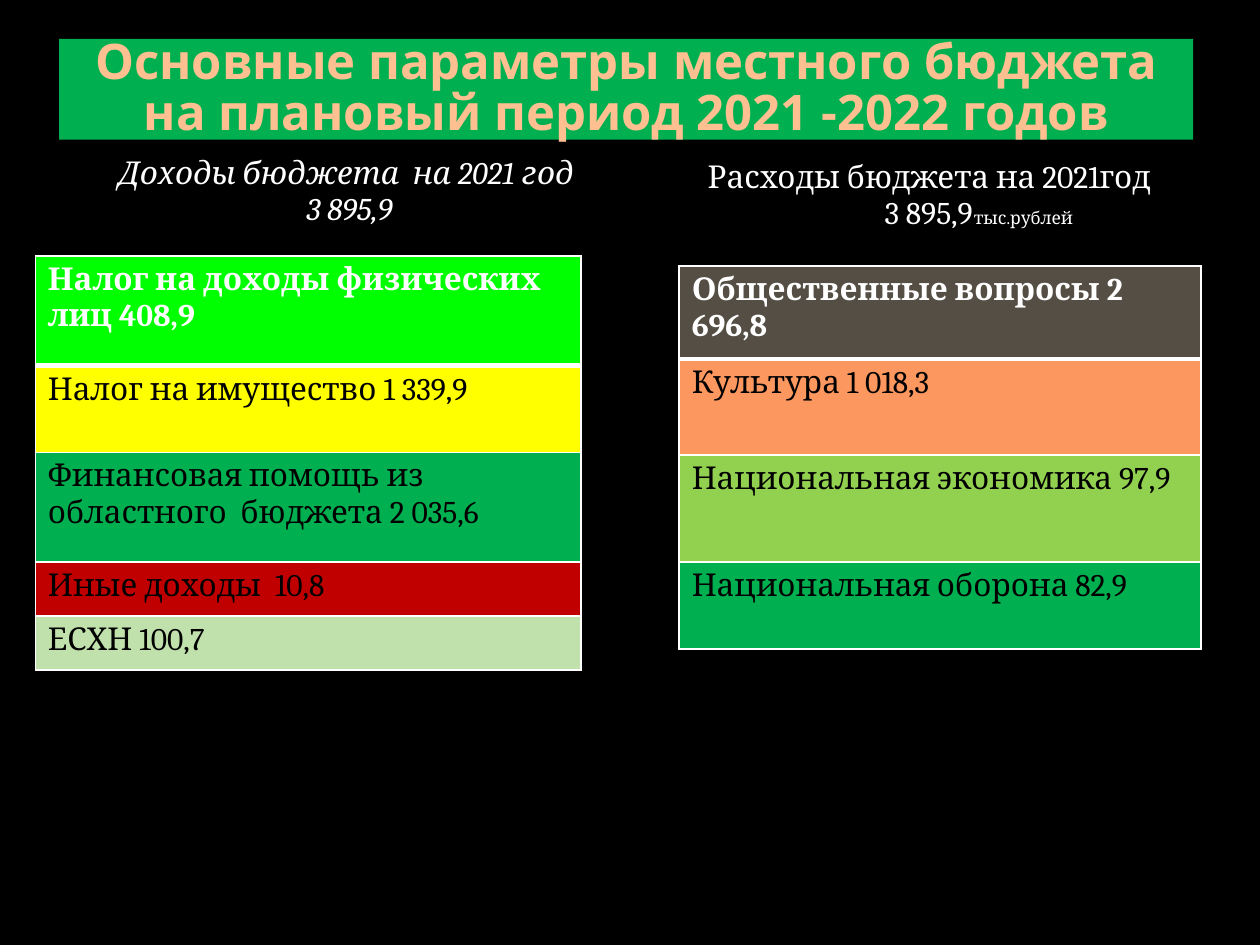
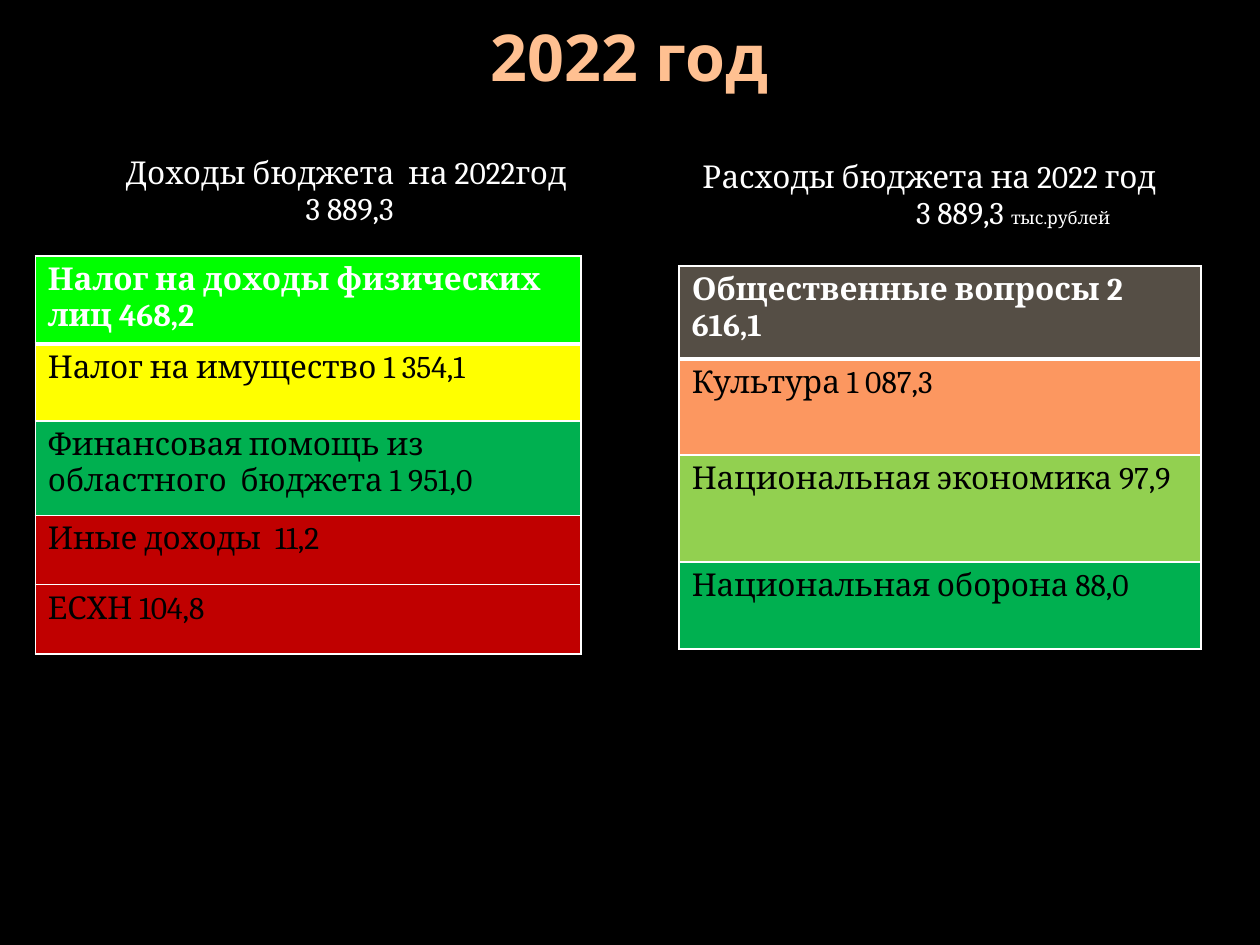
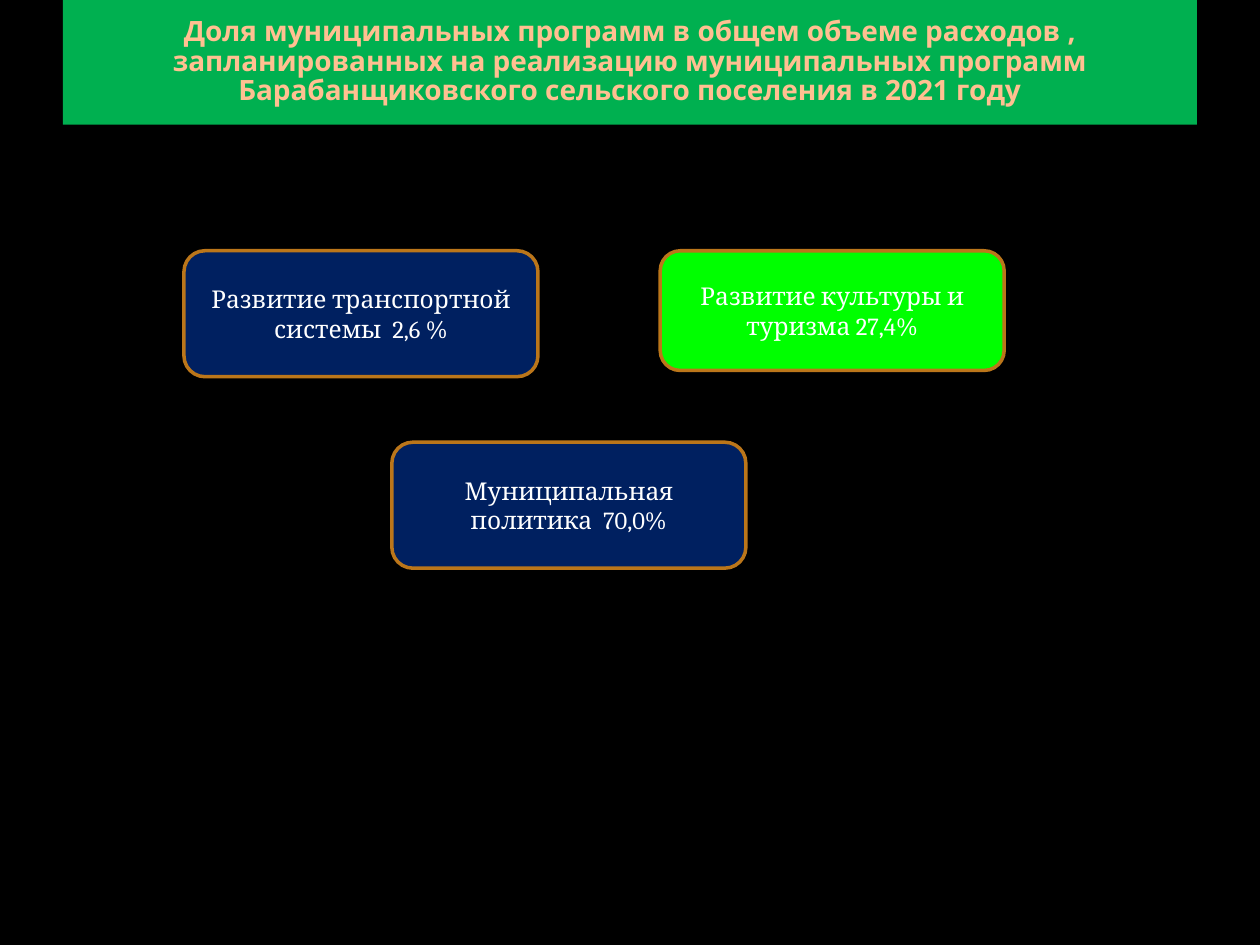
from dataclasses import dataclass

from lxml import etree
from pptx import Presentation
from pptx.dml.color import RGBColor
from pptx.enum.shapes import MSO_SHAPE
from pptx.enum.text import MSO_ANCHOR, PP_ALIGN
from pptx.oxml.ns import qn
from pptx.util import Inches, Pt

RECTANGLE, ROUNDED = MSO_SHAPE.RECTANGLE, MSO_SHAPE.ROUNDED_RECTANGLE
MIDDLE = MSO_ANCHOR.MIDDLE
LEFT, CENTER = PP_ALIGN.LEFT, PP_ALIGN.CENTER
NO_TABLE_STYLE = "{2D5ABB26-0587-4C30-8999-92F81FD0307C}"

# The slide is a grid of 100 columns and 75 rows
SLIDE_WIDTH, SLIDE_HEIGHT = Inches(10), Inches(7.5)
COLUMNS, ROWS = 100, 75


@dataclass(frozen=True)
class Theme:
    background: str = "000000"
    light: str = "FFFFFF"
    dark: str = "000000"
    title: str = "FFC091"
    green: str = "00B050"
    lime: str = "00FF00"
    yellow: str = "FFFF00"
    red: str = "C00000"
    pale_green: str = "C0E1AB"
    brown: str = "554E45"
    orange: str = "FC9760"
    grass: str = "92D050"
    navy: str = "002060"
    outline: str = "BB761A"
    title_font: str = "Noto Sans"
    body_font: str = "Cambria"
    body_size: float = 18
    unit_size: float = 10
    program_size: float = 14
    title_spacing: float = 0.87
    thin: float = 1
    thick: float = 3


THEME = Theme()


@dataclass(frozen=True)
class Box:
    """A place in grid columns and rows."""
    left: float
    top: float
    width: float
    height: float

    def lengths(self) -> tuple[int, int, int, int]:
        return (across(self.left), down(self.top), across(self.width), down(self.height))


@dataclass(frozen=True)
class Style:
    size: float = THEME.body_size
    color: str = THEME.light
    font: str = THEME.body_font
    bold: bool = False
    italic: bool = False


@dataclass(frozen=True)
class Title:
    text: str
    box: Box
    size: float
    fill: str | None = THEME.green


@dataclass(frozen=True)
class Entry:
    """One coloured row of a budget table."""
    text: str
    height: float
    fill: str


@dataclass(frozen=True)
class BudgetYear:
    title: Title
    income_heading: str
    expense_heading: str
    total: str
    heading_italic: bool
    total_indent: float
    unit_tab: float | None
    income: list[Entry]
    expenses: list[Entry]


@dataclass(frozen=True)
class Program:
    text: str
    box: Box
    fill: str


def across(columns: float) -> int:
    return round(SLIDE_WIDTH * columns / COLUMNS)


def down(rows: float) -> int:
    return round(SLIDE_HEIGHT * rows / ROWS)


def add_run(paragraph, text: str, style: Style) -> None:
    run = paragraph.add_run()
    run.text = text
    font = run.font
    font.name, font.size = style.font, Pt(style.size)
    font.bold, font.italic = style.bold, style.italic
    font.color.rgb = RGBColor.from_string(style.color)


def add_label(slide, kind, box: Box, text: str, style: Style,
              fill: str | None, line: str | None = None):
    """Draw a shape with centred text and return its paragraph."""
    shape = slide.shapes.add_shape(kind, *box.lengths())
    shape.shadow.inherit = False
    if fill:
        shape.fill.solid()
        shape.fill.fore_color.rgb = RGBColor.from_string(fill)
    else:
        shape.fill.background()
    if line:
        shape.line.color.rgb = RGBColor.from_string(line)
        shape.line.width = Pt(2)
    else:
        shape.line.fill.background()
    frame = shape.text_frame
    frame.word_wrap, frame.vertical_anchor = True, MIDDLE
    paragraph = frame.paragraphs[0]
    paragraph.alignment = CENTER
    add_run(paragraph, text, style)
    return paragraph


def add_title(slide, title: Title) -> None:
    style = Style(title.size, THEME.title, THEME.title_font, bold=True)
    paragraph = add_label(slide, RECTANGLE, title.box, title.text, style, title.fill)
    paragraph.line_spacing = THEME.title_spacing


def add_plain_table(slide, box: Box, row_count: int):
    table = slide.shapes.add_table(row_count, 1, *box.lengths()).table
    table.first_row = table.horz_banding = False
    table._tbl.tblPr.find(qn("a:tableStyleId")).text = NO_TABLE_STYLE
    return table


def add_heading(slide, box: Box):
    """Add a one-cell table and return its text frame."""
    cell = add_plain_table(slide, box, 1).cell(0, 0)
    cell.fill.background()
    return cell.text_frame


def set_borders(cell, widths: dict[str, float]) -> None:
    properties = cell._tc.get_or_add_tcPr()
    for position, (side, width) in enumerate(widths.items()):
        line = etree.Element(qn(f"a:{side}"), w=str(Pt(width)))
        fill = etree.SubElement(line, qn("a:solidFill"))
        etree.SubElement(fill, qn("a:srgbClr"), val=THEME.light)
        properties.insert(position, line)


def add_budget_table(slide, left: float, top: float, width: float,
                     entries: list[Entry]) -> None:
    height = sum(entry.height for entry in entries)
    table = add_plain_table(slide, Box(left, top, width, height), len(entries))
    for index, entry in enumerate(entries):
        is_first = index == 0
        table.rows[index].height = down(entry.height)
        cell = table.cell(index, 0)
        cell.fill.solid()
        cell.fill.fore_color.rgb = RGBColor.from_string(entry.fill)
        style = Style(color=THEME.light if is_first else THEME.dark, bold=is_first)
        add_run(cell.text_frame.paragraphs[0], entry.text, style)
        set_borders(cell, {
            "lnL": THEME.thin,
            "lnR": THEME.thin,
            "lnT": THEME.thick if index == 1 else THEME.thin,
            "lnB": THEME.thick if is_first else THEME.thin,
        })


def add_budget_slide(slide, year: BudgetYear) -> None:
    add_title(slide, year.title)

    # Income heading
    frame = add_heading(slide, Box(5.2, 11.9, 45.1, 7.7))
    style = Style(italic=year.heading_italic)
    for paragraph, text in ((frame.paragraphs[0], year.income_heading),
                            (frame.add_paragraph(), year.total)):
        paragraph.alignment = CENTER
        add_run(paragraph, text, style)

    # Expense heading, with the total and its unit on an indented line
    frame = add_heading(slide, Box(51.4, 12.2, 44.7, 7.6))
    frame.paragraphs[0].alignment = CENTER
    add_run(frame.paragraphs[0], year.expense_heading, Style())
    total = frame.add_paragraph()
    total.alignment = LEFT
    properties = total._p.get_or_add_pPr()
    properties.set("marL", str(across(year.total_indent)))
    properties.set("indent", "0")
    separator = " "
    if year.unit_tab:
        separator = "\t"
        stops = etree.SubElement(properties, qn("a:tabLst"))
        etree.SubElement(stops, qn("a:tab"), pos=str(across(year.unit_tab)), algn="l")
    add_run(total, year.total + separator, Style())
    add_run(total, "тыс.рублей", Style(THEME.unit_size))

    # Budget tables
    add_budget_table(slide, 2.8, 20.3, 43.3, year.income)
    add_budget_table(slide, 53.9, 21.1, 41.4, year.expenses)


def add_program_slide(slide, title: Title, programs: list[Program]) -> None:
    add_title(slide, title)
    for program in programs:
        add_label(slide, ROUNDED, program.box, program.text,
                  Style(THEME.program_size), program.fill, THEME.outline)


def income_entries(values: list[str], heights: list[float], last_fill: str) -> list[Entry]:
    names = ["Налог на доходы физических лиц ", "Налог на имущество ",
             "Финансовая помощь из областного  бюджета ", "Иные доходы  ", "ЕСХН "]
    fills = [THEME.lime, THEME.yellow, THEME.green, THEME.red, last_fill]
    return [Entry(name + value, height, fill)
            for name, value, height, fill in zip(names, values, heights, fills)]


def expense_entries(values: list[str]) -> list[Entry]:
    names = ["Общественные вопросы ", "Культура ",
             "Национальная экономика ", "Национальная оборона "]
    heights = [7.4, 7.6, 8.5, 6.9]
    fills = [THEME.brown, THEME.orange, THEME.grass, THEME.green]
    return [Entry(name + value, height, fill)
            for name, value, height, fill in zip(names, values, heights, fills)]


BUDGET_YEARS = [
    BudgetYear(
        Title("Основные параметры местного бюджета на плановый период 2021 -2022 годов",
              Box(4.7, 3.1, 90, 8), 28),
        "Доходы бюджета  на 2021 год ", "Расходы бюджета на 2021год", "3 895,9",
        heading_italic=True, total_indent=17.8, unit_tab=30.9,
        income=income_entries(["408,9", "1 339,9", "2 035,6", "10,8", "100,7"],
                              [8.7, 6.9, 8.7, 4.3, 4.3], THEME.pale_green),
        expenses=expense_entries(["2 696,8", "1 018,3", "97,9", "82,9"])),
    BudgetYear(
        Title("2022 год", Box(5, 3, 90, 3.8), 36.9, fill=None),
        "Доходы бюджета  на 2022год ", "Расходы бюджета на 2022 год", "3 889,3",
        heading_italic=False, total_indent=20.3, unit_tab=None,
        income=income_entries(["468,2", "1 354,1", "1 951,0", "11,2", "104,8"],
                              [7, 6.1, 7.5, 5.5, 5.5], THEME.red),
        expenses=expense_entries(["2 616,1", "1 087,3", "97,9", "88,0"])),
]

PROGRAM_TITLE = Title(
    "Доля муниципальных программ в общем объеме расходов , запланированных на реализацию "
    "муниципальных программ Барабанщиковского сельского поселения в 2021 году",
    Box(5, 0, 90, 9.9), 16)
PROGRAMS = [
    Program("Развитие культуры и туризма 27,4%", Box(52.4, 19.9, 27.3, 9.5), THEME.lime),
    Program("Развитие транспортной системы  2,6 %", Box(14.6, 19.9, 28.1, 10), THEME.navy),
    Program("Муниципальная политика  70,0%", Box(31.1, 35.1, 28.1, 10), THEME.navy),
]


def add_blank_slide(presentation):
    slide = presentation.slides.add_slide(presentation.slide_layouts[6])
    slide.background.fill.solid()
    slide.background.fill.fore_color.rgb = RGBColor.from_string(THEME.background)
    return slide


def main() -> None:
    presentation = Presentation()
    presentation.slide_width, presentation.slide_height = SLIDE_WIDTH, SLIDE_HEIGHT
    for year in BUDGET_YEARS:
        add_budget_slide(add_blank_slide(presentation), year)
    add_program_slide(add_blank_slide(presentation), PROGRAM_TITLE, PROGRAMS)
    presentation.save("out.pptx")


if __name__ == "__main__":
    main()
